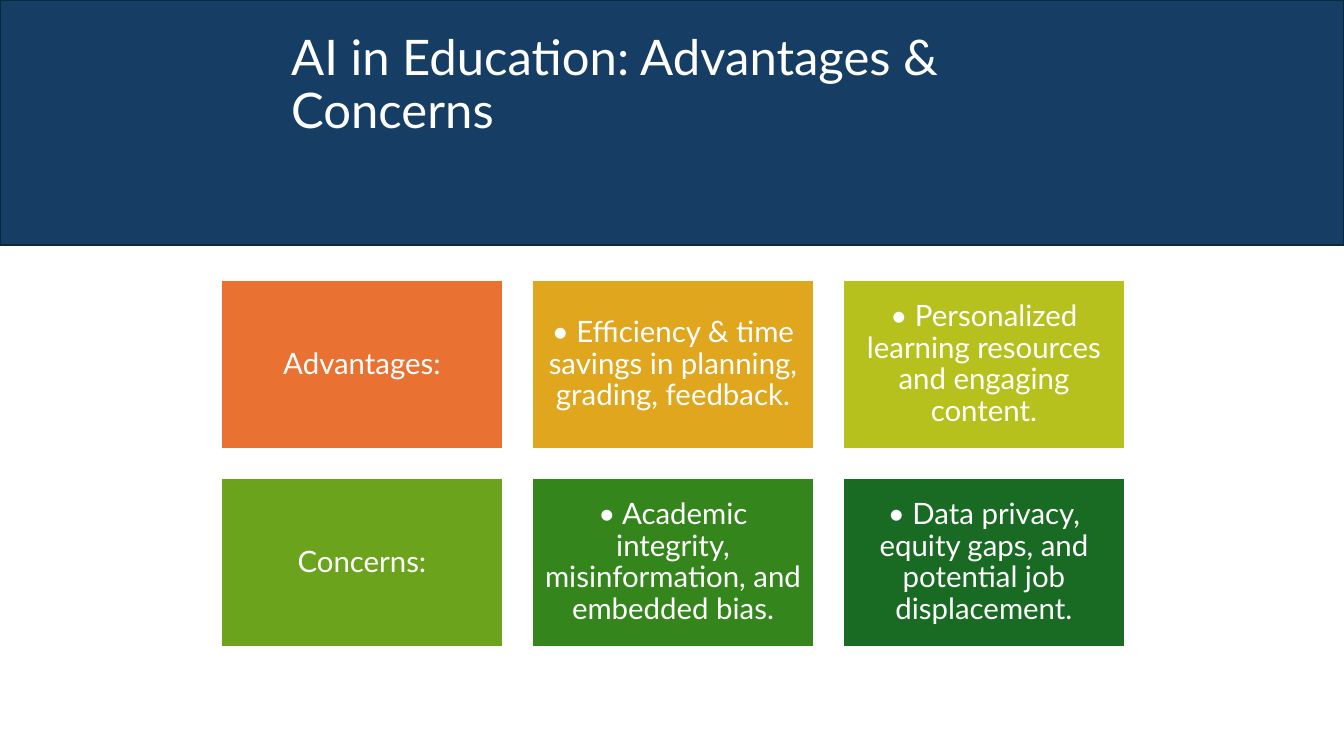
import pptx
import pptx.util
import pptx.dml.color
import pptx.enum.shapes
import pptx.enum.text

SCALE = 914400 / 100.8
MID = pptx.enum.text.MSO_ANCHOR.MIDDLE
ALIGN = pptx.enum.text.PP_ALIGN


def px(*sizes):
    """Turn pixel lengths into EMU."""
    return [pptx.util.Emu(round(size * SCALE)) for size in sizes]


def write(shape, text, size, align):
    frame = shape.text_frame
    frame.word_wrap = True
    frame.auto_size = pptx.enum.text.MSO_AUTO_SIZE.NONE
    frame.vertical_anchor = MID
    para = frame.paragraphs[0]
    para.alignment = align
    para.line_spacing = 0.9
    run = para.add_run()
    run.text = text
    run.font.size = pptx.util.Pt(size)
    run.font.name = "Lato"
    run.font.color.rgb = pptx.dml.color.RGBColor.from_string("FFFFFF")


deck = pptx.Presentation()
deck.slide_width, deck.slide_height = px(1344, 756)
slide = deck.slides.add_slide(deck.slide_layouts[5])

title = slide.shapes.title
title.left, title.top, title.width, title.height = px(281, 38, 831, 97)
write(title, "AI in Education: Advantages & Concerns", 35, ALIGN.LEFT)

# Fill, outline, box and text of the band and the cards
boxes = [("163E64", "092A39", (0, 0, 1344, 245), "")]
cards = [
    ("E97132", "Advantages:"),
    ("E0A61D", "• Efficiency & time savings in planning, grading, feedback."),
    ("B7C11E", "• Personalized learning resources and engaging content."),
    ("6BA31D", "Concerns:"),
    ("34861C", "• Academic integrity, misinformation, and embedded bias."),
    ("196B24", "• Data privacy, equity gaps, and potential job displacement."),
]
for i, (fill, text) in enumerate(cards):
    row, col = divmod(i, 3)
    boxes.append((fill, "FFFFFF", (221 + 311 * col, 280 + 198 * row, 282, 169), text))

for fill, edge, box, text in boxes:
    shape = slide.shapes.add_shape(pptx.enum.shapes.MSO_SHAPE.RECTANGLE, *px(*box))
    shape.shadow.inherit = False
    shape.fill.solid()
    shape.fill.fore_color.rgb = pptx.dml.color.RGBColor.from_string(fill)
    shape.line.color.rgb = pptx.dml.color.RGBColor.from_string(edge)
    shape.line.width = pptx.util.Pt(1.5)
    if text:
        frame = shape.text_frame
        frame.margin_left, frame.margin_top, frame.margin_right, frame.margin_bottom = px(9, 9, 9, 9)
        write(shape, text, 21, ALIGN.CENTER)
    else:
        # The band goes behind the title
        title.element.addprevious(shape.element)

deck.save("out.pptx")
